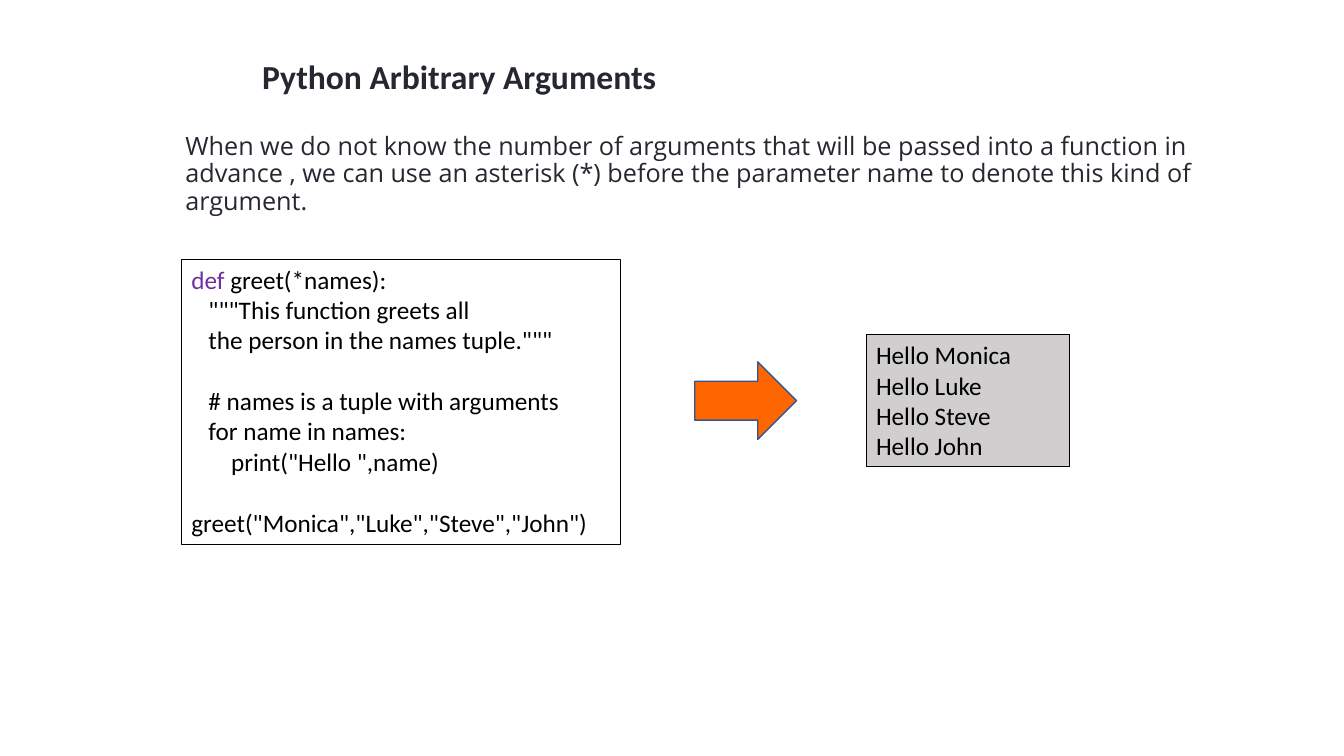
from pptx import Presentation
from pptx.dml.color import RGBColor
from pptx.enum.shapes import MSO_SHAPE as Shape
from pptx.enum.text import MSO_ANCHOR as Anchor, MSO_AUTO_SIZE as AutoSize, PP_ALIGN as Align
from pptx.util import Pt

EMU_PER_PX = 9144
SLIDE_SIZE = (1333, 750)
TITLE_ONLY = 5

INK = RGBColor(0x25, 0x28, 0x30)
BLACK = RGBColor(0x00, 0x00, 0x00)
PURPLE = RGBColor(0x70, 0x30, 0xA0)
GREY = RGBColor(0xD0, 0xCE, 0xCE)
ORANGE = RGBColor(0xFF, 0x66, 0x00)
BLUE = RGBColor(0x32, 0x54, 0x91)

INTRO = (
    "When we do not know the number of arguments that will be passed into a function in "
    "advance , we can use an asterisk (*) before the parameter name to denote this kind of argument."
)
CODE = '''def greet(*names):
   """This function greets all
   the person in the names tuple."""

   # names is a tuple with arguments
   for name in names:
       print("Hello ",name)

greet("Monica","Luke","Steve","John")'''
NAMES = ("Monica", "Luke", "Steve", "John")


def px(*lengths):
    return [length * EMU_PER_PX for length in lengths]


class SlideBuilder:
    font = "Calibri"
    body_font = "Open Sans"
    size = 18
    title_size = 24
    code_line = 22

    def __init__(self, deck):
        self.page = deck.slides.add_slide(deck.slide_layouts[TITLE_ONLY])

    def run(self, para, text, color, font=None, size=None, bold=False):
        span = para.add_run()
        span.text = text
        span.font.name = font or self.font
        span.font.size = Pt(size or self.size)
        span.font.bold = bold
        span.font.color.rgb = color

    def frame(self, box, wrap=True):
        frame = box.text_frame
        frame.word_wrap = wrap
        frame.auto_size = AutoSize.SHAPE_TO_FIT_TEXT
        frame.vertical_anchor = Anchor.TOP
        frame.paragraphs[0].alignment = Align.LEFT
        return frame

    def title(self, text, *place):
        box = self.page.shapes.title
        box.left, box.top, box.width, box.height = px(*place)
        para = self.frame(box, wrap=False).paragraphs[0]
        self.run(para, text, INK, size=self.title_size, bold=True)

    def body(self, text, *place):
        box = self.page.shapes.add_textbox(*px(*place))
        para = self.frame(box).paragraphs[0]
        para.line_spacing = 0.9
        self.run(para, text, INK, font=self.body_font)

    def shape(self, kind, fill, line, weight, *place):
        box = self.page.shapes.add_shape(kind, *px(*place))
        box.shadow.inherit = False
        if fill is None:
            box.fill.background()
        else:
            box.fill.solid()
            box.fill.fore_color.rgb = fill
        box.line.color.rgb = line
        box.line.width = Pt(weight)
        return box

    def listing(self, text, fill, *place):
        frame = self.frame(self.shape(Shape.RECTANGLE, fill, BLACK, 0.75, *place))
        para = frame.paragraphs[0]
        gap = 0
        for index, line in enumerate(text.split("\n")):
            if not line:
                gap += self.code_line
                continue
            if index:
                para = frame.add_paragraph()
                para.alignment = Align.LEFT
            if gap:
                para.space_before = Pt(gap)
                gap = 0
            if line.startswith("def "):
                self.run(para, "def", PURPLE)
                line = line[3:]
            self.run(para, line, BLACK)


def main():
    deck = Presentation()
    deck.slide_width, deck.slide_height = px(*SLIDE_SIZE)
    slide = SlideBuilder(deck)
    slide.title("Python Arbitrary Arguments", 250, 50, 415, 50)
    slide.body(INTRO, 174, 128, 1029, 71)
    slide.listing(CODE, None, 180, 257, 435, 283)
    slide.listing("\n".join(f"Hello {name}" for name in NAMES), GREY, 859, 332, 202, 131)
    slide.shape(Shape.RIGHT_ARROW, ORANGE, BLUE, 1, 689, 359, 101, 77)
    deck.save("out.pptx")


if __name__ == "__main__":
    main()
